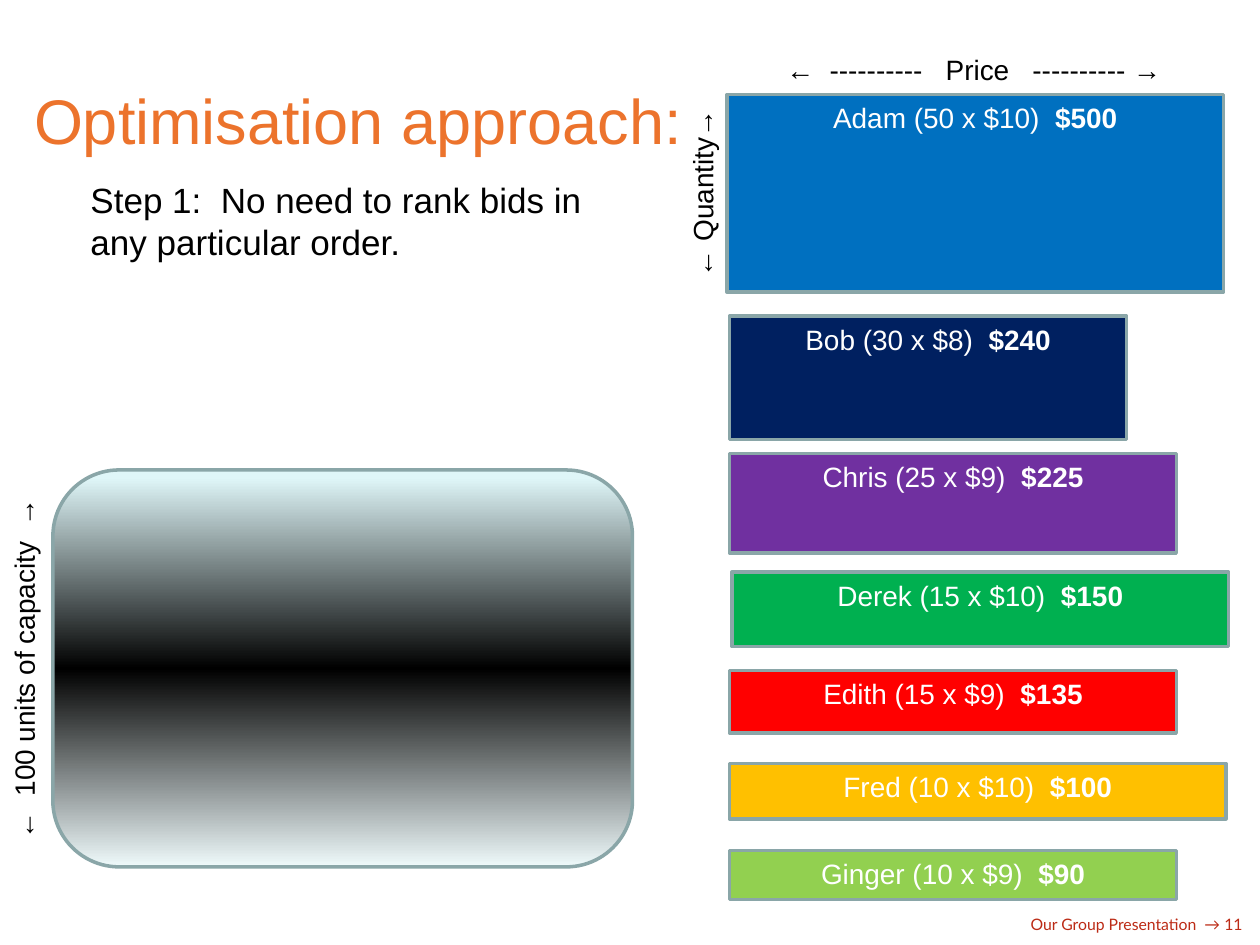
from copy import deepcopy
from pptx import Presentation
from pptx.dml.color import RGBColor
from pptx.enum.shapes import MSO_SHAPE
from pptx.enum.text import MSO_ANCHOR, PP_ALIGN
from pptx.util import Inches, Pt

HUES = {
    "title": "EC732C", "foot": "BC2B16", "edge": "8AA6A8",
    "ink": "000000", "pale": "FFFFFF",
    "blue": "0070C0", "navy": "002060", "plum": "7030A0", "green": "00B050",
    "red": "FF0000", "gold": "FFC000", "lime": "92D050",
}
FADE = [(0.02, "DFF6F8"), (0.5, "000000"), (1, "EFFAFB")]
COLS = 100
CELL = Inches(10) / COLS
PRICE = 3.94

BIDS = [
    ("Adam", 50, 10, "blue", 57.7, 7.5, 15.7),
    ("Bob", 30, 8, "navy", 57.9, 25.1, 9.8),
    ("Chris", 25, 9, "plum", 57.9, 36, 7.9),
    ("Derek", 15, 10, "green", 58.1, 45.4, 5.9),
    ("Edith", 15, 9, "red", 57.9, 53.2, 5),
    ("Fred", 10, 10, "gold", 57.9, 60.6, 4.4),
    ("Ginger", 10, 9, "lime", 57.9, 67.5, 3.9),
]


def grid(*cells):
    return [round(cell * CELL) for cell in cells]


def hue(name):
    return RGBColor.from_string(HUES[name])


def style(run, size, tint, face="Arial", bold=False):
    run.font.size = Pt(size)
    run.font.name = face
    run.font.bold = bold
    run.font.color.rgb = hue(tint)


def label(slide, area, text, size=16, tint="ink", face="Arial",
          align=PP_ALIGN.CENTER, turn=0):
    box = slide.shapes.add_textbox(*grid(*area))
    box.rotation = turn
    frame = box.text_frame
    frame.word_wrap = True
    frame.text = text
    para = frame.paragraphs[0]
    para.alignment = align
    style(para.runs[0], size, tint, face)
    return frame


def block(slide, kind, area):
    shape = slide.shapes.add_shape(kind, *grid(*area))
    shape.shadow.inherit = False
    shape.line.color.rgb = hue("edge")
    shape.line.width = Pt(2)
    return shape


def tank(slide, area):
    shape = block(slide, MSO_SHAPE.ROUNDED_RECTANGLE, area)
    fill = shape.fill
    fill.gradient()
    fill.gradient_angle = 270
    first = fill._fill._gradFill.gsLst[0]
    first.addnext(deepcopy(first))
    for stop, (place, tint) in zip(fill.gradient_stops, FADE):
        stop.position = place
        stop.color.rgb = RGBColor.from_string(tint)


def bid(slide, name, count, price, tint, left, top, height):
    area = (left, top, price * PRICE, height)
    shape = block(slide, MSO_SHAPE.RECTANGLE, area)
    shape.fill.solid()
    shape.fill.fore_color.rgb = hue(tint)
    frame = shape.text_frame
    frame.vertical_anchor = MSO_ANCHOR.TOP
    para = frame.paragraphs[0]
    para.alignment = PP_ALIGN.CENTER
    para.text = f"{name} ({count} x ${price})  "
    para.add_run().text = f"${count * price}"
    for run, bold in zip(para.runs, (False, True)):
        style(run, 16, "pale", bold=bold)


def main():
    deck = Presentation()
    deck.slide_width, deck.slide_height = Inches(10), Inches(7.5)
    slide = deck.slides.add_slide(deck.slide_layouts[6])

    foot = label(slide, (63.9, 70.2, 34.7, 3.9),
                 "Our Group Presentation  → 11", 9, "foot", "Lato",
                 PP_ALIGN.RIGHT)
    foot.vertical_anchor = MSO_ANCHOR.BOTTOM
    foot.margin_right = foot.margin_bottom = 0
    title = label(slide, (2.7, 6, 81.1, 6.3), "Optimisation approach:",
                  36, "title", align=PP_ALIGN.LEFT)
    title.margin_left = 0

    tank(slide, (4.2, 37.3, 46, 31.5))
    label(slide, (-13.7, 51.1, 31.5, 4), "←  100 units of capacity  →",
          turn=270)
    for row in BIDS:
        bid(slide, *row)
    label(slide, (47.9, 13.5, 15.7, 3.7), "← Quantity→", turn=270)
    label(slide, (57.6, 3.7, 39.4, 3.7),
          "←  ----------   Price   ---------- →")
    label(slide, (6.2, 13.7, 43.3, 7.7),
          "Step 1:  No need to rank bids in any particular order.",
          20, align=PP_ALIGN.LEFT)
    deck.save("out.pptx")


if __name__ == "__main__":
    main()
